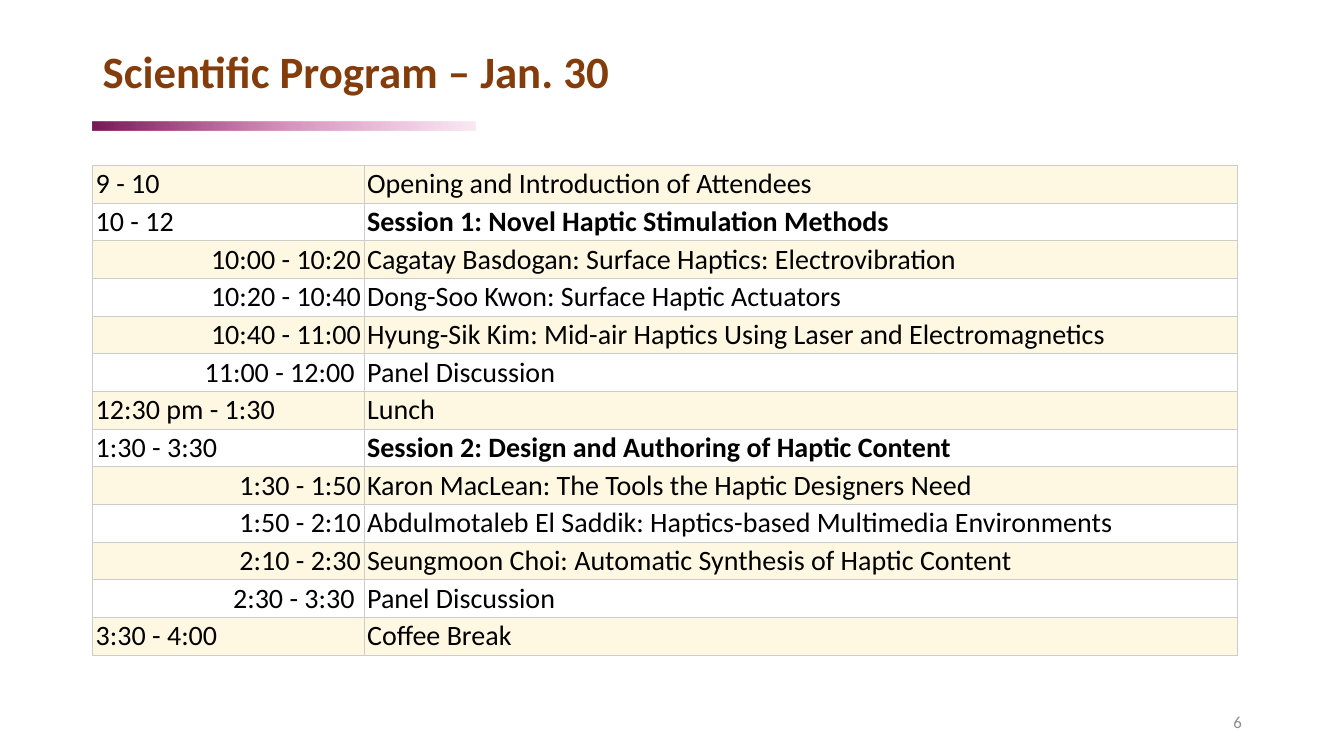
from collections import namedtuple
from copy import deepcopy

from lxml import etree
from pptx import Presentation
from pptx import util as u
from pptx.dml.color import RGBColor
from pptx.enum import shapes, text
from pptx.oxml import ns

Box = namedtuple("Box", "left top width height")
WIDTH, HEIGHT = u.Inches(13.33), u.Inches(7.5)
FONT = "Calibri"
COLORS = {
    "title": "843C0B", "body": "000000", "number": "8C8C8C",
    "cream": "FEF8E3", "white": "FFFFFF", "border": "CCCCCC",
    "plum": "771A55", "magenta": "A92579", "pink": "C82C90",
}
FADE = [(0, "plum", 100), (0.5, "magenta", 50), (1, "pink", 10)]
COLUMN_SHARES = (23.7, 76.3)
PROGRAM = [
    ("9 - 10", "Opening and Introduction of Attendees", "event"),
    ("10 - 12", "Session 1: Novel Haptic Stimulation Methods", "session"),
    ("10:00 - 10:20", "Cagatay Basdogan: Surface Haptics: Electrovibration", "talk"),
    ("10:20 - 10:40", "Dong-Soo Kwon: Surface Haptic Actuators", "talk"),
    ("10:40 - 11:00", "Hyung-Sik Kim: Mid-air Haptics Using Laser and Electromagnetics", "talk"),
    ("11:00 - 12:00 ", "Panel Discussion", "talk"),
    ("12:30 pm - 1:30", "Lunch", "event"),
    ("1:30 - 3:30", "Session 2: Design and Authoring of Haptic Content", "session"),
    ("1:30 - 1:50", "Karon MacLean: The Tools the Haptic Designers Need", "talk"),
    ("1:50 - 2:10", "Abdulmotaleb El Saddik: Haptics-based Multimedia Environments", "talk"),
    ("2:10 - 2:30", "Seungmoon Choi: Automatic Synthesis of Haptic Content", "talk"),
    ("2:30 - 3:30 ", "Panel Discussion", "talk"),
    ("3:30 - 4:00", "Coffee Break", "event"),
]


def percent_box(left, top, width, height):
    return Box(int(WIDTH * left / 100), int(HEIGHT * top / 100),
               int(WIDTH * width / 100), int(HEIGHT * height / 100))


def part(box, left, top, width, height):
    return Box(int(box.left + box.width * left), int(box.top + box.height * top),
               int(box.width * width), int(box.height * height))


def rgb(name):
    return RGBColor.from_string(COLORS[name])


def write(frame, words, size=20, color="body", bold=False, right=False, spacing=1.0):
    paragraph = frame.paragraphs[0]
    paragraph.alignment = text.PP_ALIGN.RIGHT if right else text.PP_ALIGN.LEFT
    paragraph.line_spacing = spacing
    run = paragraph.add_run()
    run.text = words
    run.font.name = FONT
    run.font.size = u.Pt(size)
    run.font.bold = bold
    run.font.color.rgb = rgb(color)


def add_label(slide, box, words, **style):
    frame = slide.shapes.add_textbox(*box).text_frame
    frame.word_wrap = True
    frame.vertical_anchor = text.MSO_ANCHOR.MIDDLE
    write(frame, words, **style)


def fade_fill(shape):
    fill = shape.fill
    fill.gradient()
    fill.gradient_angle = 0
    stops = shape._element.spPr.find(".//" + ns.qn("a:gsLst"))
    stops.append(deepcopy(stops[0]))
    for stop, element, (position, color, opacity) in zip(fill.gradient_stops, stops, FADE):
        stop.position = position
        stop.color.rgb = rgb(color)
        etree.SubElement(element[0], ns.qn("a:alpha"), val=str(opacity * 1000))


def add_header(slide, box):
    rule = slide.shapes.add_shape(shapes.MSO_SHAPE.RECTANGLE, *part(box, 0, 0.91, 0.33, 0.09))
    rule.shadow.inherit = False
    rule.line.fill.background()
    fade_fill(rule)
    add_label(slide, part(box, 0, 0, 1, 0.76), "Scientific Program – Jan. 30",
              size=32, color="title", bold=True, spacing=0.9)


def add_borders(cell):
    properties = cell._tc.get_or_add_tcPr()
    for side in ("lnL", "lnR", "lnT", "lnB"):
        line = etree.SubElement(properties, ns.qn("a:" + side), w=str(u.Pt(0.6)))
        solid = etree.SubElement(line, ns.qn("a:solidFill"))
        etree.SubElement(solid, ns.qn("a:srgbClr"), val=COLORS["border"])


def fill_cell(cell, words, background, **style):
    cell.margin_left = cell.margin_right = u.Inches(0.03)
    cell.margin_top = cell.margin_bottom = u.Inches(0.015)
    cell.vertical_anchor = text.MSO_ANCHOR.BOTTOM
    add_borders(cell)
    cell.fill.solid()
    cell.fill.fore_color.rgb = rgb(background)
    write(cell.text_frame, words, **style)


def add_program(slide, box):
    schedule = slide.shapes.add_table(len(PROGRAM), len(COLUMN_SHARES), *box).table
    schedule.first_row = schedule.horz_banding = False
    for column, share in zip(schedule.columns, COLUMN_SHARES):
        column.width = int(box.width * share / 100)
    for index, (time, topic, kind) in enumerate(PROGRAM):
        schedule.rows[index].height = box.height // len(PROGRAM)
        background = "white" if index % 2 else "cream"
        fill_cell(schedule.cell(index, 0), time, background, right=kind == "talk")
        fill_cell(schedule.cell(index, 1), topic, background, bold=kind == "session")


def main():
    deck = Presentation()
    deck.slide_width, deck.slide_height = WIDTH, HEIGHT
    slide = deck.slides.add_slide(deck.slide_layouts[6])
    add_header(slide, percent_box(6.9, 5.33, 86.25, 11.87))
    add_label(slide, percent_box(84.75, 92.8, 8.4, 5.33), "6",
              size=12, color="number", right=True)
    add_program(slide, percent_box(6.9, 21.87, 85.2, 64.8))
    deck.save("out.pptx")


if __name__ == "__main__":
    main()
